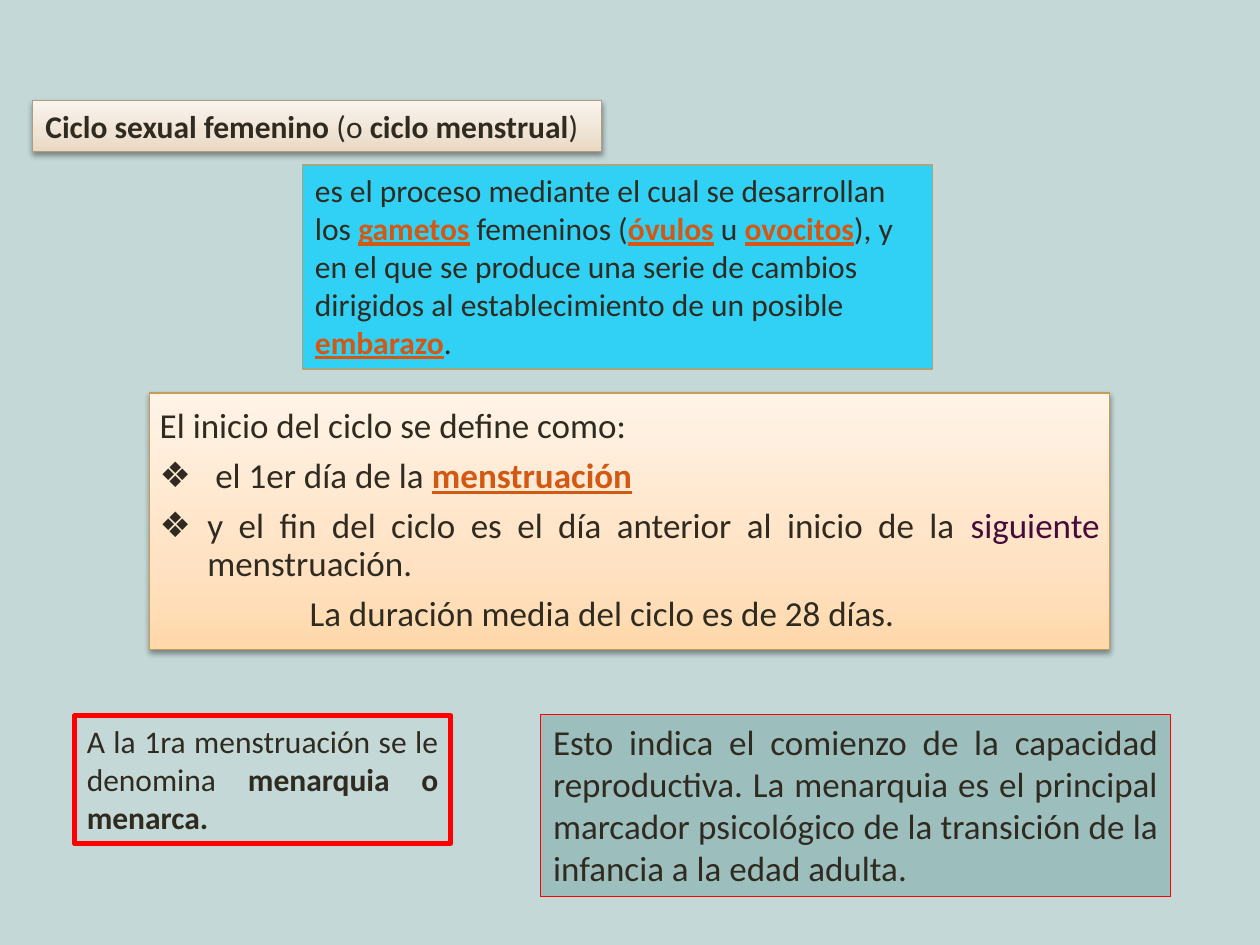
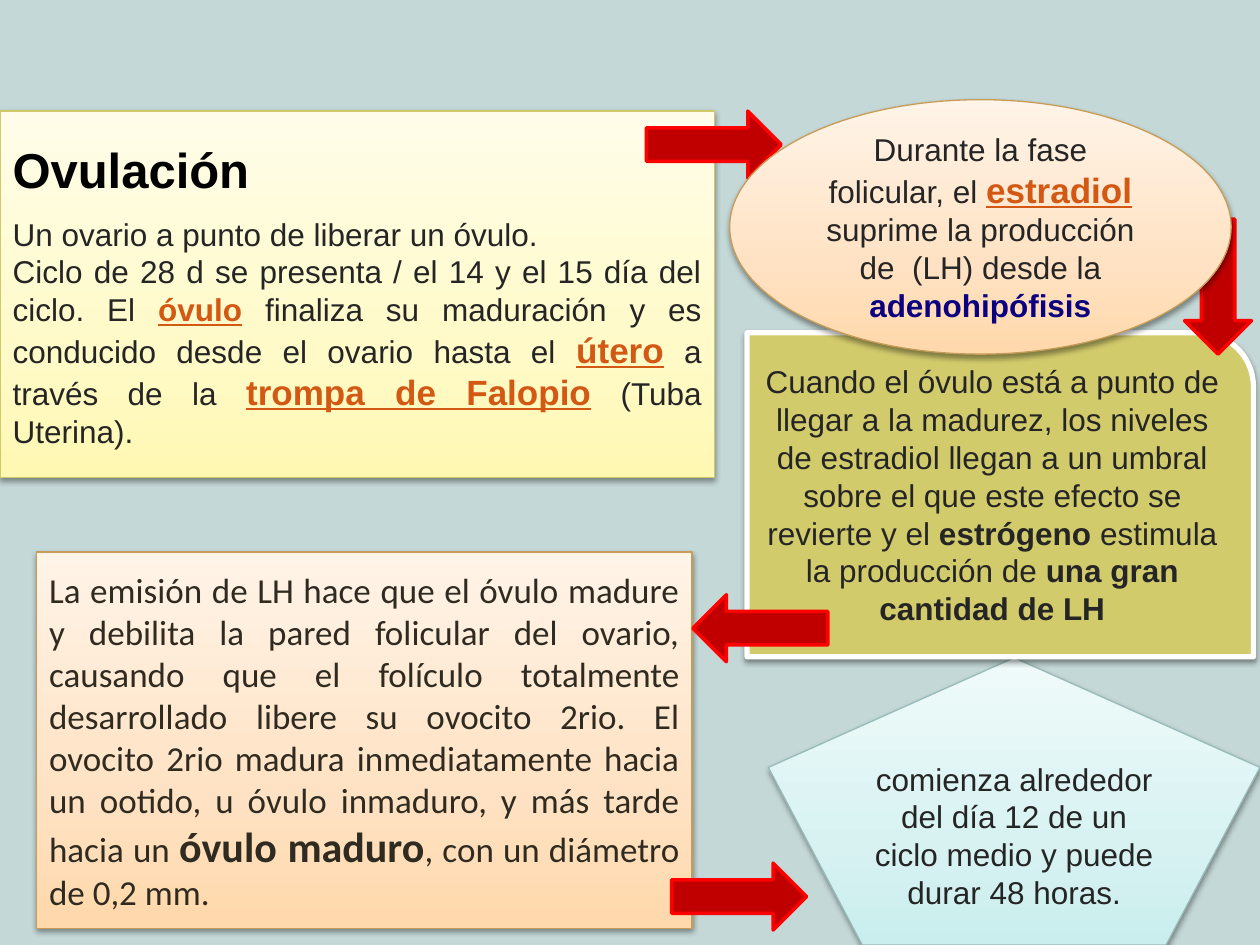
from copy import deepcopy

from lxml.etree import SubElement
from pptx import Presentation
from pptx.dml.color import RGBColor
from pptx.enum.shapes import MSO_SHAPE
from pptx.enum.text import MSO_ANCHOR, MSO_AUTO_SIZE, PP_ALIGN
from pptx.oxml.ns import qn
from pptx.util import Cm, Pt

INK, GREY = "2F2B20", "252525"
BOLD = {"bold": True}
LINK = {"bold": True, "under": True, "color": "D25814"}
BIG = {**LINK, "size": 20}
PEACH = ("FFD8AB", "FFE2C3", "FFF4E8")
SAND = ("EAD8C2", "EFE3D4", "FAF4EE")
LEMON = ("FFF8B3", "FFFAC8", "FFFDEA")
AQUA = ("C9EEED", "D8F2F2", "EFFBFA")
LEFT, MID, FULL = PP_ALIGN.LEFT, PP_ALIGN.CENTER, PP_ALIGN.JUSTIFY
TOP, BASE = MSO_ANCHOR.TOP, MSO_ANCHOR.BOTTOM


def tint(code):
    return RGBColor.from_string(code)


def place(shape, box):
    shape.left, shape.top, shape.width, shape.height = map(Cm, box)


def blend(shape, codes):
    shape.fill.gradient()
    shape.fill.gradient_angle = 90
    stops = shape._element.spPr.find(qn("a:gradFill")).find(qn("a:gsLst"))
    stops.insert(1, deepcopy(stops[0]))
    for stop, code, spot in zip(shape.fill.gradient_stops, codes, (0, 0.35, 1)):
        stop.color.rgb = tint(code)
        stop.position = spot


def shade(shape):
    effect = shape._element.spPr.find(qn("a:effectLst"))
    outer = SubElement(effect, qn("a:outerShdw"), blurRad="40000", dist="20000",
                       dir="5400000", rotWithShape="0")
    color = SubElement(outer, qn("a:srgbClr"), val="000000")
    SubElement(color, qn("a:alpha"), val="38000")


def paint(shape, fill, line, width=0.75, shadow=False):
    if fill is None:
        shape.fill.background()
    elif isinstance(fill, tuple):
        blend(shape, fill)
    else:
        shape.fill.solid()
        shape.fill.fore_color.rgb = tint(fill)
    shape.line.color.rgb = tint(line)
    shape.line.width = Pt(width)
    shape.shadow.inherit = False
    if shadow:
        shade(shape)


def form(slide, kind, box, fill, line, width=0.75, shadow=False):
    shape = slide.shapes.add_shape(kind, *map(Cm, box))
    paint(shape, fill, line, width, shadow)
    return shape


def indent(para, left=0, mark=None):
    props = para._p.get_or_add_pPr()
    props.set("marL", str(Cm(left)))
    props.set("indent", str(-Cm(left) if mark else 0))
    if mark:
        SubElement(props, qn("a:buFont"), typeface="Arial")
        SubElement(props, qn("a:buChar"), char=mark)
    else:
        SubElement(props, qn("a:buNone"))


def add_run(para, part, size, font, color):
    text, style = part if isinstance(part, tuple) else (part, {})
    run = para.add_run()
    run.text = text
    run.font.name = font
    run.font.size = Pt(style.get("size", size))
    run.font.bold = style.get("bold", False)
    run.font.underline = style.get("under", False)
    run.font.color.rgb = tint(style.get("color", color))


def write(shape, lines, size=18, font="Calibri", color=INK, align=LEFT,
          anchor=MSO_ANCHOR.MIDDLE, wrap=True, dents=None, space=1, after=0):
    frame = shape.text_frame
    frame.auto_size = MSO_AUTO_SIZE.NONE
    frame.word_wrap = wrap
    frame.vertical_anchor = anchor
    for num, parts in enumerate(lines):
        para = frame.add_paragraph() if num else frame.paragraphs[0]
        para.alignment = align
        para.line_spacing = space
        para.space_before = Pt(0)
        para.space_after = Pt(after)
        indent(para, *(dents[num] if dents else ()))
        for part in parts:
            add_run(para, part, size, font, color)


def open_slide(deck, title, body):
    slide = deck.slides.add_slide(deck.slide_layouts[1])
    head, text = slide.placeholders
    place(head, title)
    place(text, body)
    slide.shapes._spTree.append(head._element)
    return slide, head, text


def cycle(deck):
    slide, head, text = open_slide(deck, (0.66, 2.03, 11.46, 1.02),
                                   (3.02, 7.92, 19.35, 5.18))
    paint(head, SAND, "AE9D85", shadow=True)
    write(head, [[("Ciclo sexual femenino", BOLD), " (o ",
                  ("ciclo menstrual", BOLD), ")"]], wrap=False)
    paint(text, PEACH, "C69C58", shadow=True)
    frame = text.text_frame
    frame.margin_left = frame.margin_right = Cm(0.2)
    write(text, [
        ["El inicio del ciclo se define como:"],
        ["el 1er día de la ", ("menstruación", LINK)],
        ["y el fin del ciclo es el día anterior al inicio de la ",
         ("siguiente", {"color": "460A3B"}), " menstruación."],
        ["La duración media del ciclo es de 28 días."],
    ], size=20, align=FULL, space=0.9, after=7,
        dents=[(), (1.12, "❖"), (0.96, "❖"), (3.02,)])

    rect = MSO_SHAPE.RECTANGLE
    process = form(slide, rect, (6.1, 3.33, 12.7, 4.11), "31D0F5", "A9A57C")
    write(process, [[
        "es el proceso mediante el cual se desarrollan los ", ("gametos", LINK),
        " femeninos (", ("óvulos", LINK), " u ", ("ovocitos", LINK),
        "), y en el que se produce una serie de cambios dirigidos al "
        "establecimiento de un posible ", ("embarazo", LINK), "."]], anchor=TOP)
    first = form(slide, rect, (1.5, 14.43, 7.59, 2.57), None, "FF0000", 3)
    write(first, [["A la 1ra menstruación se le denomina ",
                   ("menarquia o menarca.", BOLD)]], align=FULL, anchor=TOP)
    sign = form(slide, rect, (10.9, 14.4, 12.7, 3.68), "9CBEBD", "FF0000")
    write(sign, [["Esto indica el comienzo de la capacidad reproductiva. La "
                  "menarquia es el principal marcador psicológico de la "
                  "transición de la infancia a la edad adulta."]],
          size=20, align=FULL, anchor=TOP)


def release(deck):
    slide, head, text = open_slide(deck, (0, 2.8, 14.4, 1.2), (0, 2.24, 14.4, 7.39))
    write(head, [[("Ovulación", BOLD)]], size=28, font="Arial", color="000000")
    paint(text, LEMON, "D0C967", shadow=True)
    text.text_frame.margin_bottom = Cm(0.56)
    write(text, [
        ["Un ovario a punto de liberar un óvulo."],
        ["Ciclo de 28 d se presenta / el 14 y el 15 día del ciclo. El ",
         ("óvulo", LINK),
         " finaliza su maduración y es conducido desde el ovario hasta el ",
         ("útero", BIG), " a través de la ", ("trompa de Falopio", BIG),
         " (Tuba Uterina)."],
    ], font="Arial", color=GREY, align=FULL, anchor=BASE)

    note = {"font": "Arial", "color": GREY, "align": MID}
    start = form(slide, MSO_SHAPE.REGULAR_PENTAGON, (15.49, 13.26, 9.91, 5.79),
                 AQUA, "98BBBA", shadow=True)
    write(start, [["comienza alrededor del día 12 de un ciclo medio y puede "
                   "durar 48 horas."]], **note)
    surge = form(slide, MSO_SHAPE.ROUND_1_RECTANGLE, (15.06, 6.71, 10.21, 6.53),
                 "D2CB6C", "FFFFFF", 3, True)
    write(surge, [[
        "Cuando el óvulo está a punto de llegar a la madurez, los niveles de "
        "estradiol llegan a un umbral sobre el que este efecto se revierte y el ",
        ("estrógeno ", BOLD), "estimula la producción de ",
        ("una gran cantidad de LH", BOLD)]], **note)
    egg = form(slide, MSO_SHAPE.RECTANGLE, (0.74, 11.13, 13.21, 7.59),
               PEACH, "C69C58", shadow=True)
    write(egg, [[
        "La emisión de LH hace que el óvulo madure y debilita la pared folicular "
        "del ovario, causando que el folículo totalmente desarrollado libere su "
        "ovocito 2rio. El ovocito 2rio madura inmediatamente hacia un ootido, u "
        "óvulo inmaduro, y más tarde hacia un ",
        ("óvulo maduro", {"bold": True, "size": 24}),
        ", con un diámetro de 0,2 mm."]], size=20, align=FULL)

    for kind, left, top in ((MSO_SHAPE.RIGHT_ARROW, 13.03, 2.24),
                            (MSO_SHAPE.DOWN_ARROW, 23.88, 4.42),
                            (MSO_SHAPE.LEFT_ARROW, 13.97, 11.99),
                            (MSO_SHAPE.RIGHT_ARROW, 13.54, 17.4)):
        size = (1.35, 2.72) if kind == MSO_SHAPE.DOWN_ARROW else (2.72, 1.35)
        form(slide, kind, (left, top, *size), "C00000", "FF0000", 2)

    phase = form(slide, MSO_SHAPE.OVAL, (14.71, 2.01, 10.11, 5.13),
                 PEACH, "C69C58", shadow=True)
    write(phase, [["Durante la fase folicular, el ", ("estradiol", BIG),
                   " suprime la producción de  (LH) desde la ",
                   ("adenohipófisis", {"bold": True, "color": "0B0080"})]], **note)


def main():
    deck = Presentation()
    deck.slide_width, deck.slide_height = Cm(25.4), Cm(19.05)
    back = deck.slide_master.background.fill
    back.solid()
    back.fore_color.rgb = tint("C4D8D7")
    cycle(deck)
    release(deck)
    deck.save("out.pptx")


if __name__ == "__main__":
    main()
